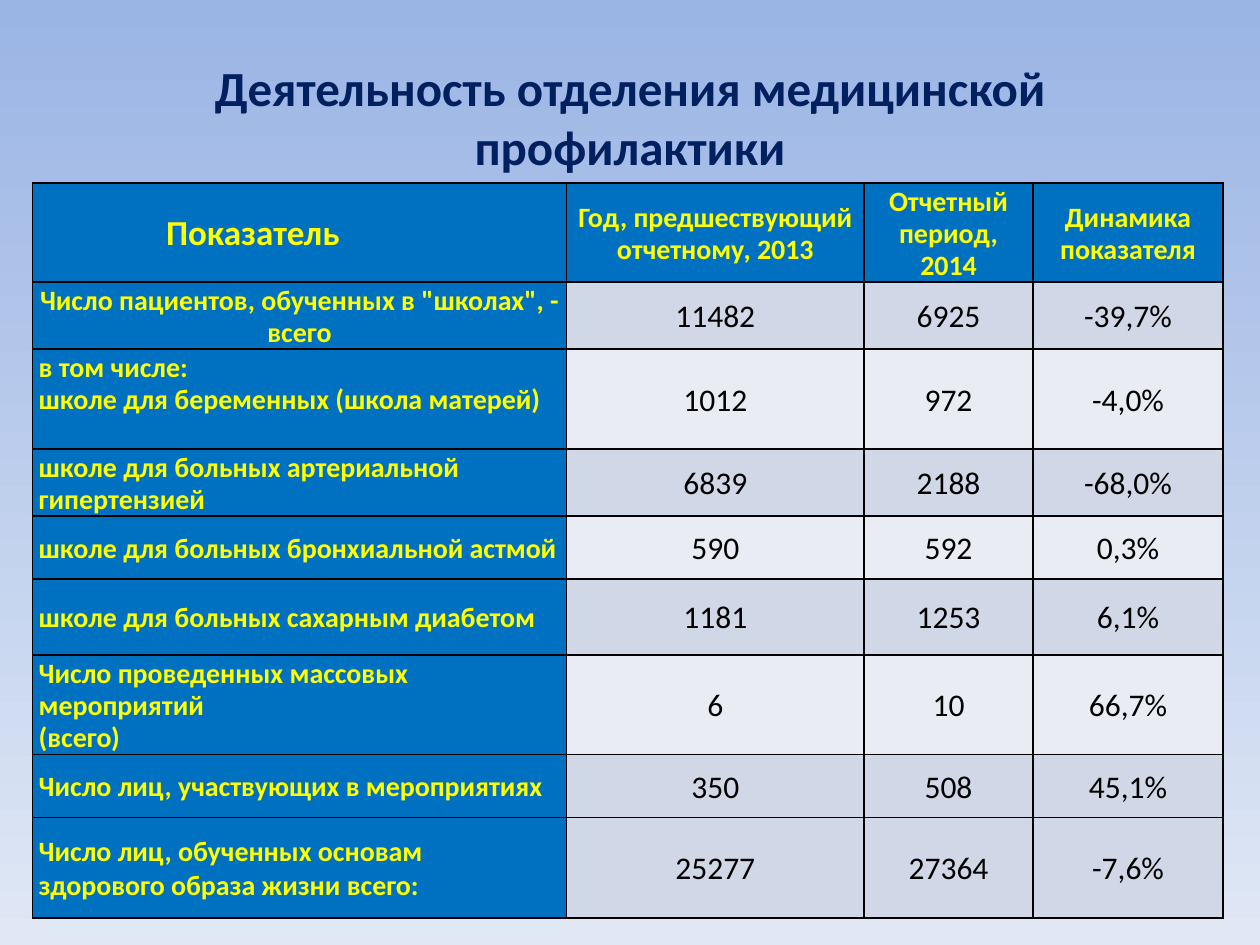
from pptx import Presentation
from pptx.dml.color import RGBColor
from pptx.enum import text as tx
from pptx.oxml import parse_xml
from pptx.oxml.ns import nsdecls
from pptx.util import Pt

SKY = RGBColor(0x9A, 0xB4, 0xE4)
MIST = RGBColor(0xE0, 0xE8, 0xF5)
NAVY = RGBColor(0x00, 0x20, 0x60)
BLUE = RGBColor(0x00, 0x70, 0xC0)
GOLD = RGBColor(0xFF, 0xFF, 0x00)
BLACK = RGBColor(0x00, 0x00, 0x00)
BANDS = (RGBColor(0xD0, 0xD8, 0xE7), RGBColor(0xE9, 0xEC, 0xF3))

FACE = "Calibri"
LABEL = {"size": Pt(16), "bold": True, "name": FACE}
VALUE = {"size": Pt(18), "bold": False, "name": FACE}
CENTER = tx.PP_ALIGN.CENTER
LEFT = tx.PP_ALIGN.LEFT

HEAD = ("Показатель", "Год, предшествующий отчетному, 2013",
        "Отчетный\vпериод, 2014", "Динамика\vпоказателя")
ROWS = [
    ('Число пациентов, обученных в "школах", - всего', "11482", "6925", "-39,7%"),
    ("в том числе:\vшколе для беременных (школа матерей)", "1012", "972", "-4,0%"),
    ("школе для больных артериальной\vгипертензией", "6839", "2188", "-68,0%"),
    ("школе для больных бронхиальной астмой", "590", "592", "0,3%"),
    ("школе для больных сахарным диабетом", "1181", "1253", "6,1%"),
    ("Число проведенных массовых мероприятий\v(всего)", "6", "10", "66,7%"),
    ("Число лиц, участвующих в мероприятиях", "350", "508", "45,1%"),
    ("Число лиц, обученных основам\nздорового образа жизни всего:",
     "25277", "27364", "-7,6%"),
]
WIDTHS = (305.3, 170, 96.5, 108.6)
HEIGHTS = (56.6, 38.3, 57, 38.3, 36, 43.4, 57, 36, 57.4)


def style(frame, look, color, align, gap=None):
    for para in frame.paragraphs:
        para.alignment = align
        para.line_spacing = gap
        for run in para.runs:
            for key, val in look.items():
                setattr(run.font, key, val)
            run.font.color.rgb = color


def edge(cell):
    props = cell._tc.get_or_add_tcPr()
    for side in "LRTB":
        props.append(parse_xml(
            f'<a:ln{side} {nsdecls("a")} w="12700"><a:solidFill>'
            f'<a:srgbClr val="{BLACK}"/></a:solidFill></a:ln{side}>'))


def paint(cell, words, fill, look, color, align, gap):
    edge(cell)
    cell.fill.solid()
    cell.fill.fore_color.rgb = fill
    pads = {"margin_left": Pt(3.6), "margin_right": Pt(3.6),
            "margin_top": Pt(1.5), "margin_bottom": Pt(0),
            "vertical_anchor": tx.MSO_ANCHOR.MIDDLE}
    for key, val in pads.items():
        setattr(cell, key, val)
    cell.text_frame.text = words
    style(cell.text_frame, look, color, align, gap)


def add_title(slide, box):
    title = slide.shapes.title
    title.left, title.top, title.width, title.height = map(Pt, box)
    frame = title.text_frame
    frame.text = "Деятельность отделения медицинской профилактики"
    frame.word_wrap = True
    frame.vertical_anchor = tx.MSO_ANCHOR.MIDDLE
    style(frame, {"size": Pt(28), "bold": True, "name": FACE}, NAVY, CENTER)


def add_grid(slide, box):
    grid = slide.shapes.add_table(len(ROWS) + 1, len(HEAD), *map(Pt, box)).table
    grid.first_row = grid.horz_banding = False
    for col, wide in zip(grid.columns, WIDTHS):
        col.width = Pt(wide)
    for row, high in zip(grid.rows, HEIGHTS):
        row.height = Pt(high)

    # Header row
    for c, words in enumerate(HEAD):
        paint(grid.cell(0, c), words, BLUE, LABEL, GOLD, CENTER, 0.94)
    first = grid.cell(0, 0)
    first.margin_right = Pt(57)
    first.text_frame.paragraphs[0].runs[0].font.size = Pt(20)

    # Labels and figures; the last row falls on the first band colour
    last = len(ROWS)
    for r, (label, *nums) in enumerate(ROWS, 1):
        paint(grid.cell(r, 0), label, BLUE, LABEL, GOLD,
              CENTER if r == 1 else LEFT, 1.0 if r == last else 0.94)
        band = BANDS[0] if r == last else BANDS[(r - 1) % 2]
        for c, num in enumerate(nums, 1):
            paint(grid.cell(r, c), num, band, VALUE, BLACK, CENTER, 0.94)
    grid.cell(2, 0).vertical_anchor = tx.MSO_ANCHOR.TOP


def main():
    deck = Presentation()
    deck.slide_width, deck.slide_height = Pt(720), Pt(540)
    slide = deck.slides.add_slide(deck.slide_layouts[5])

    # Background, top to bottom
    fill = slide.background.fill
    fill.gradient()
    fill.gradient_angle = 270
    for stop, color in zip(fill.gradient_stops, (SKY, MIST)):
        stop.color.rgb = color

    add_title(slide, (36, 21.6, 648, 90))
    add_grid(slide, (18.5, 104.5, sum(WIDTHS), sum(HEIGHTS)))
    deck.save("out.pptx")


if __name__ == "__main__":
    main()
